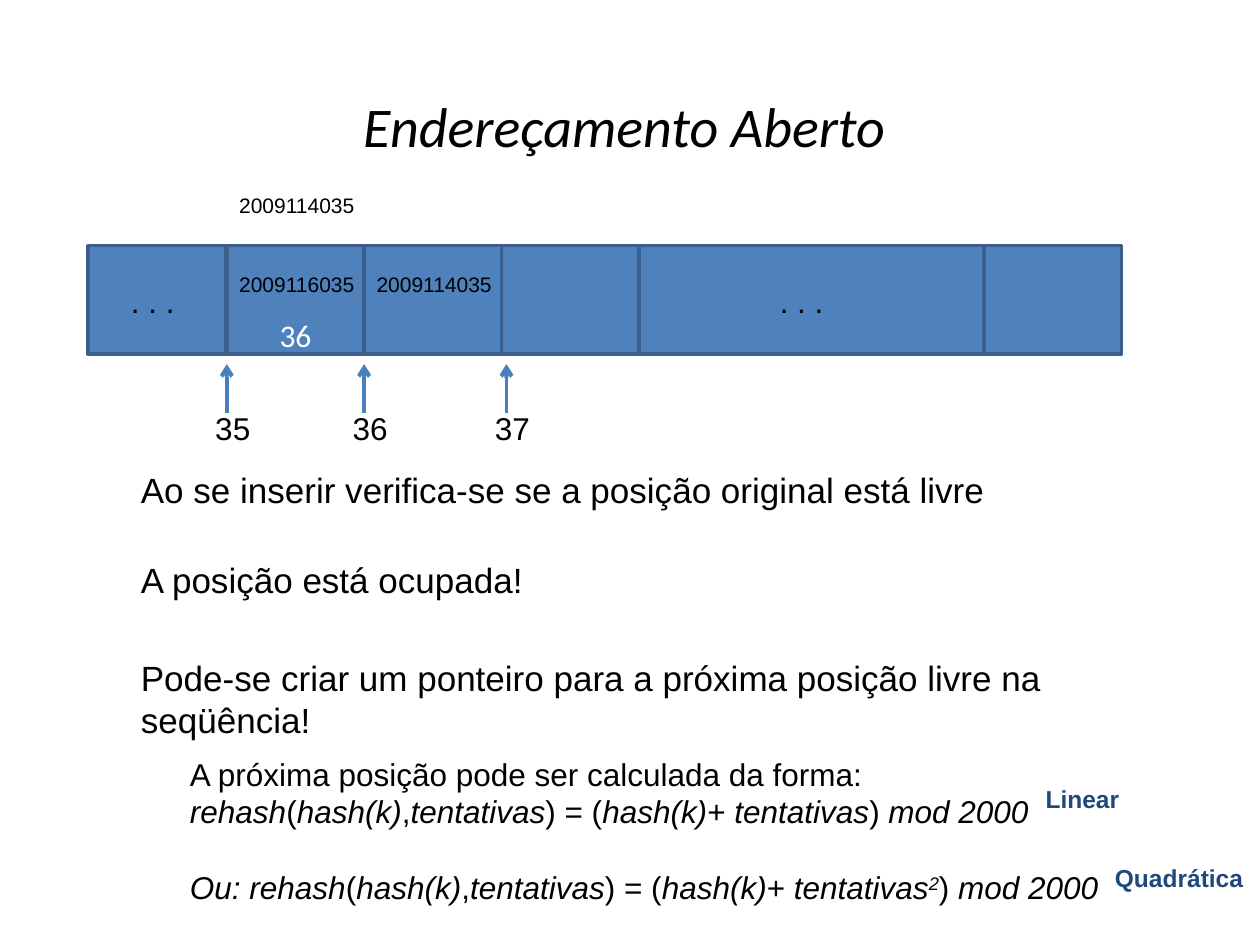
from dataclasses import dataclass

from lxml import etree
from pptx import Presentation
from pptx.dml.color import RGBColor
from pptx.enum.shapes import MSO_CONNECTOR, MSO_SHAPE
from pptx.enum.text import MSO_ANCHOR, PP_ALIGN
from pptx.oxml.ns import qn
from pptx.util import Inches, Pt

RECTANGLE = MSO_SHAPE.RECTANGLE
STRAIGHT = MSO_CONNECTOR.STRAIGHT
TOP, MIDDLE, BOTTOM = MSO_ANCHOR.TOP, MSO_ANCHOR.MIDDLE, MSO_ANCHOR.BOTTOM
LEFT, CENTER = PP_ALIGN.LEFT, PP_ALIGN.CENTER


@dataclass(frozen=True)
class Theme:
    black: RGBColor = RGBColor(0, 0, 0)
    white: RGBColor = RGBColor(255, 255, 255)
    cell_fill: RGBColor = RGBColor(0x4F, 0x81, 0xBD)
    cell_line: RGBColor = RGBColor(0x3A, 0x5F, 0x8C)
    arrow: RGBColor = RGBColor(0x4B, 0x7E, 0xBC)
    accent: RGBColor = RGBColor(0x1F, 0x49, 0x7D)
    body_font: str = "Arial"
    heading_font: str = "Calibri"
    title_size: int = 32
    statement_size: int = 20
    label_size: int = 18
    method_size: int = 14
    key_size: int = 12


THEME = Theme()


@dataclass(frozen=True)
class Label:
    text: str
    left: float
    top: float
    width: float
    height: float
    size: int = THEME.label_size
    font: str = THEME.body_font
    color: RGBColor = THEME.black
    bold: bool = False
    wrap: bool = False
    align: int = LEFT
    anchor: int = TOP
    paragraph_gap: float = 0


@dataclass(frozen=True)
class Pointer:
    index: str
    x: float


TABLE_LEFT, TABLE_TOP, TABLE_WIDTH, TABLE_HEIGHT = 0.7, 1.95, 8.2, 0.86
CELL_WIDTH = 1.09
CELL_LEFTS = [0.7, 1.8, 2.89, 3.98, 7.81]
POINTERS = [Pointer("35", 1.8), Pointer("36", 2.89), Pointer("37", 4.02)]
REHASH = "*rehash*(*hash(k)*,*tentativas*) = (*hash(k)*+ *tentativas{power}*) *mod 2000*"

LABELS = [
    Label("*Endereçamento Aberto*", 0.33, 0.58, 9.25, 0.83, size=THEME.title_size,
          font=THEME.heading_font, wrap=True, align=CENTER, anchor=MIDDLE),
    Label(". . .", 0.94, 2.19, 0.55, 0.4),
    Label(". . .", 6.09, 2.19, 0.55, 0.4),
    *[Label(key, left, top, 1.12, 0.3, size=THEME.key_size)
      for key, left, top in [("2009114035", 1.8, 1.48), ("2009116035", 1.8, 2.11),
                             ("2009114035", 2.89, 2.11)]],
    *[Label(text, 1.02, top, 7.66, height, size=THEME.statement_size, wrap=True)
      for text, top, height in [
          ("Ao se inserir verifica-se se a posição original está livre", 3.67, 0.44),
          ("A posição está ocupada!", 4.38, 0.44),
          ("Pode-se criar um ponteiro para a próxima posição livre na seqüência!",
           5.16, 0.77)]],
    Label("A próxima posição pode ser calculada da forma:\n" + REHASH.format(power=""),
          1.41, 5.94, 7.54, 0.7, wrap=True),
    Label("*Ou: *" + REHASH.format(power="^2^"), 1.41, 6.84, 7.54, 0.4, wrap=True),
    *[Label(method, left, top, width, 0.34, size=THEME.method_size,
            color=THEME.accent, bold=True)
      for method, left, top, width in [("Linear", 8.2, 6.17, 0.79),
                                       ("Quadrática", 8.75, 6.8, 1.22)]],
]


def apply_format(target: object, values: dict) -> None:
    for name, value in values.items():
        setattr(target, name, value)


def write_text(shape, label: Label) -> None:
    frame = shape.text_frame
    apply_format(frame, {"word_wrap": label.wrap, "vertical_anchor": label.anchor})
    for number, line in enumerate(label.text.split("\n")):
        paragraph = frame.add_paragraph() if number else frame.paragraphs[0]
        paragraph.alignment = label.align
        for position, styled in enumerate(line.split("*")):
            for level, text in enumerate(styled.split("^")):
                if not text:
                    continue
                run = paragraph.add_run()
                run.text = text
                apply_format(run.font, {"name": label.font, "size": Pt(label.size),
                                        "bold": label.bold, "italic": position % 2 == 1})
                run.font.color.rgb = label.color
                if level % 2:
                    run.font._element.set("baseline", "30000")


def add_label(slide, label: Label) -> None:
    shape = slide.shapes.add_textbox(Inches(label.left), Inches(label.top),
                                     Inches(label.width), Inches(label.height))
    write_text(shape, label)


def add_cell(slide, left: float, width: float):
    shape = slide.shapes.add_shape(RECTANGLE, Inches(left), Inches(TABLE_TOP),
                                   Inches(width), Inches(TABLE_HEIGHT))
    shape.shadow.inherit = False
    shape.fill.solid()
    shape.fill.fore_color.rgb = THEME.cell_fill
    shape.line.color.rgb = THEME.cell_line
    shape.line.width = Pt(2)
    return shape


def add_pointer(slide, pointer: Pointer) -> None:
    arrow = slide.shapes.add_connector(STRAIGHT, Inches(pointer.x), Inches(3.28),
                                       Inches(pointer.x), Inches(2.89))
    arrow.line.color.rgb = THEME.arrow
    arrow.line.width = Pt(2.25)
    etree.SubElement(arrow.line._get_or_add_ln(), qn("a:tailEnd"), type="arrow")
    etree.SubElement(arrow._element.spPr, qn("a:effectLst"))
    add_label(slide, Label(pointer.index, pointer.x - 0.19, 3.2, 0.48, 0.4))


def main() -> None:
    presentation = Presentation()
    presentation.slide_width = Inches(10)
    presentation.slide_height = Inches(7.5)
    slide = presentation.slides.add_slide(presentation.slide_layouts[6])

    add_cell(slide, TABLE_LEFT, TABLE_WIDTH)
    cells = [add_cell(slide, left, CELL_WIDTH) for left in CELL_LEFTS]
    write_text(cells[1], Label("36", CELL_LEFTS[1], TABLE_TOP, CELL_WIDTH, TABLE_HEIGHT,
                               font=THEME.heading_font, color=THEME.white, wrap=True,
                               align=CENTER, anchor=BOTTOM))
    cells[1].text_frame.margin_bottom = Inches(0)
    for pointer in POINTERS:
        add_pointer(slide, pointer)
    for label in LABELS:
        add_label(slide, label)

    presentation.save("out.pptx")


if __name__ == "__main__":
    main()
